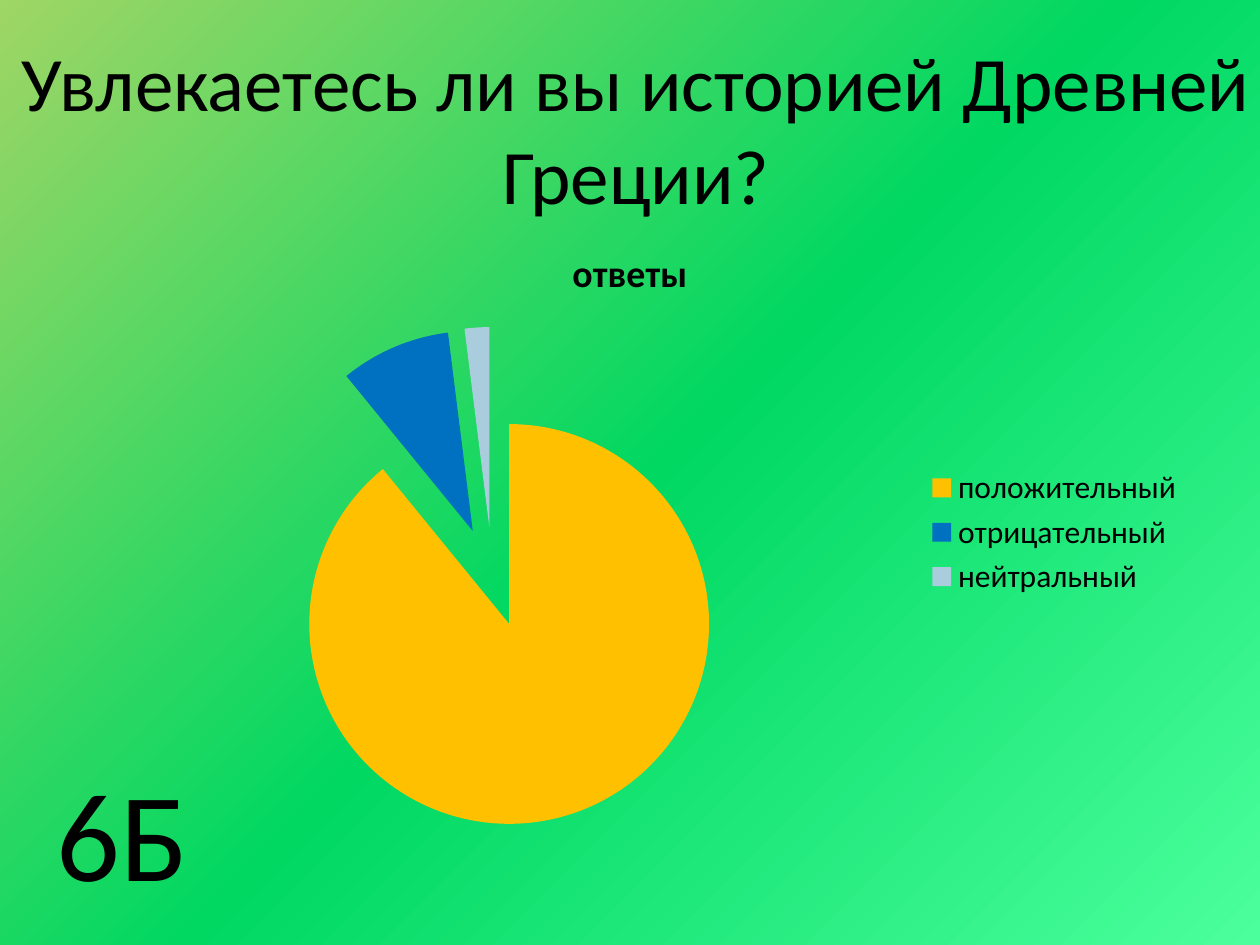
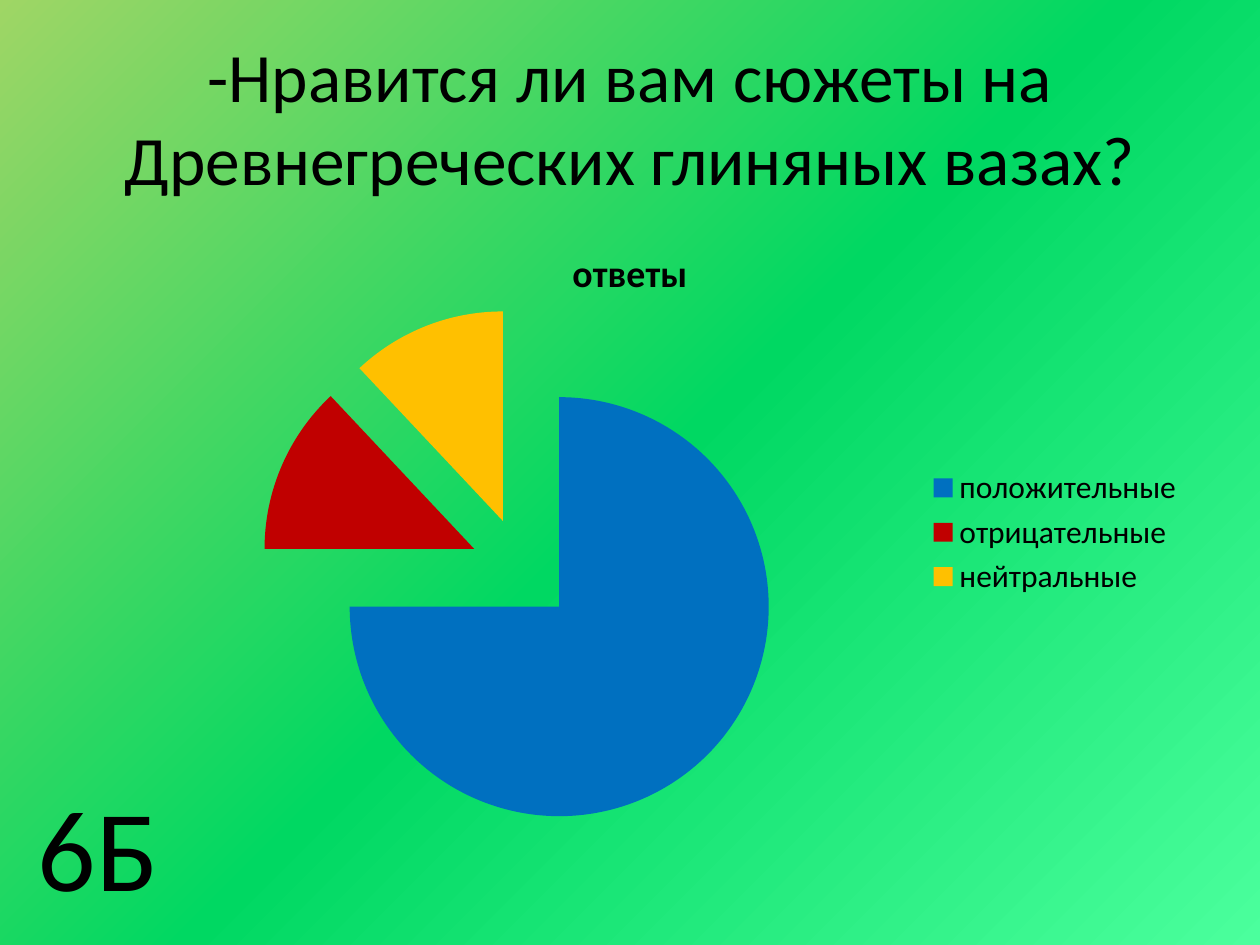
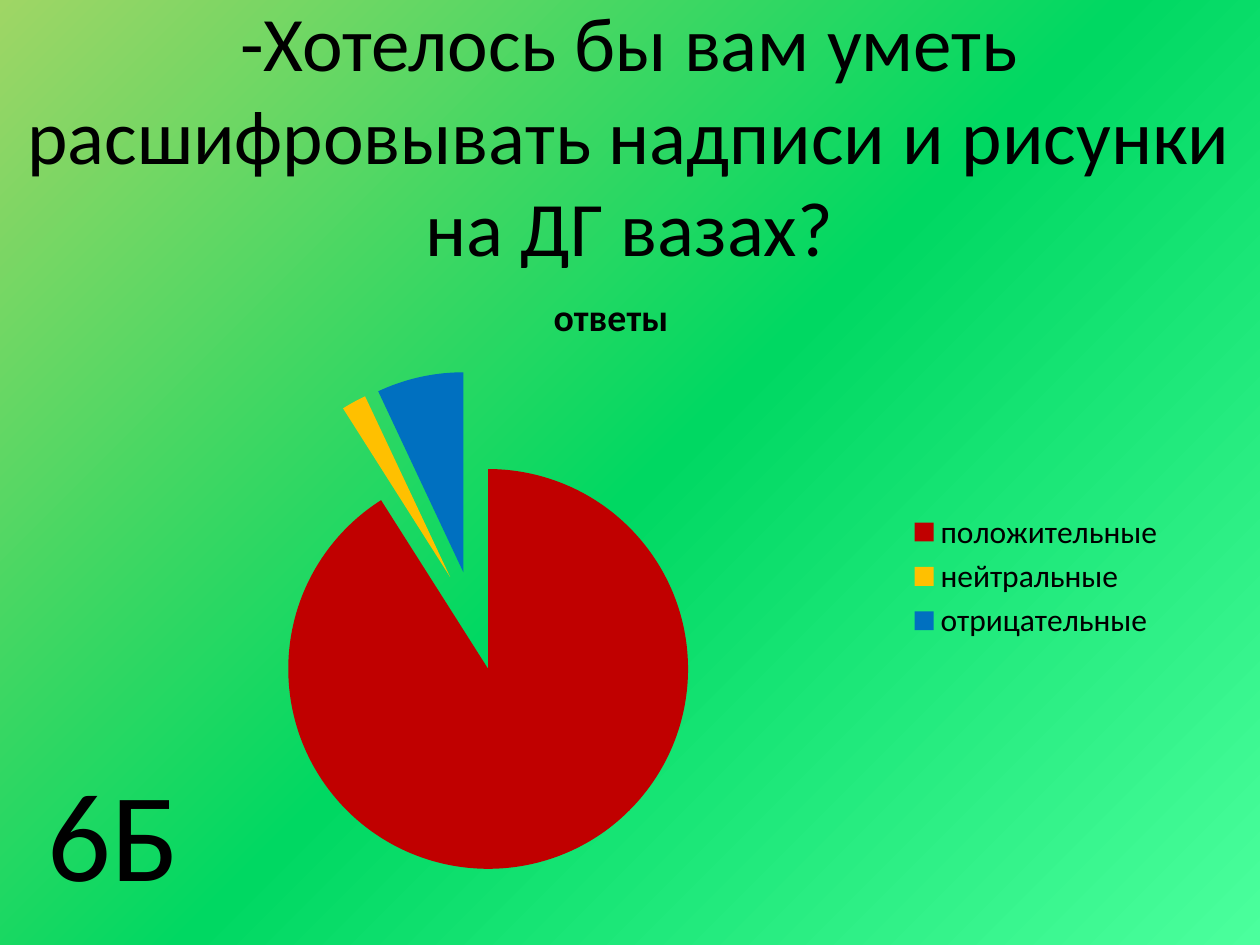
from dataclasses import dataclass

from lxml import etree
from pptx import Presentation
from pptx.chart.data import CategoryChartData
from pptx.dml.color import RGBColor
from pptx.enum.chart import XL_CHART_TYPE, XL_LEGEND_POSITION
from pptx.enum.text import MSO_ANCHOR, MSO_AUTO_SIZE, PP_ALIGN
from pptx.oxml.ns import qn
from pptx.util import Inches, Pt

PIE = XL_CHART_TYPE.PIE
LEGEND_RIGHT = XL_LEGEND_POSITION.RIGHT
MIDDLE = MSO_ANCHOR.MIDDLE
CENTER = PP_ALIGN.CENTER
LEFT = PP_ALIGN.LEFT
FIXED_SIZE = MSO_AUTO_SIZE.NONE
GROW = MSO_AUTO_SIZE.SHAPE_TO_FIT_TEXT


@dataclass(frozen=True)
class Theme:
    font: str = "Calibri"
    ink: str = "000000"
    gold: str = "FFC000"
    blue: str = "0070C0"
    red: str = "C00000"
    pale: str = "A9CDDC"
    gradient: tuple = ((0, "9FD665"), (51, "00D862"), (100, "4BFF9D"))
    chart_size: float = 18
    chart_title_size: float = 21.6


theme = Theme()
CHART_NAME = "ответы"
CLASS_NAME = "6Б"
EXPLOSION = 25

surveys = [
    {
        "question": "Увлекаетесь ли вы историей Древней Греции?",
        "question_at": (-0.02, 0, 10.14, 2.02),
        "question_size": 44,
        "chart_at": (0.5, 1.75, 9, 4.95),
        "answers": [
            ("положительный", 90, theme.gold),
            ("отрицательный", 9, theme.blue),
            ("нейтральный", 2, theme.pale),
        ],
        "plot_at": None,
        "class_at": (0.35, 5.95, 1.26, 1.31),
        "class_size": 72,
    },
    {
        "question": "-Нравится ли вам сюжеты на Древнегреческих глиняных вазах?",
        "question_at": (0.5, 0.3, 9, 1.25),
        "question_size": 39.6,
        "chart_at": (0.5, 1.75, 9, 4.95),
        "answers": [
            ("положительные", 75, theme.blue),
            ("отрицательные", 13, theme.red),
            ("нейтральные", 12, theme.gold),
        ],
        "plot_at": {"x": 0.04, "y": 0.14, "w": 0.73, "h": 0.84},
        "class_at": (0.2, 6.11, 1.41, 1.21),
        "class_size": 66,
    },
    {
        "question": "-Хотелось бы вам уметь расшифровывать надписи и рисунки на ДГ вазах?",
        "question_at": (-0.2, -0.19, 10.39, 2.5),
        "question_size": 44,
        "chart_at": (0.35, 2.1, 9, 4.95),
        "answers": [
            ("положительные", 91, theme.red),
            ("нейтральные", 2, theme.gold),
            ("отрицательные", 7, theme.blue),
        ],
        "plot_at": None,
        "class_at": (0.28, 5.95, 1.81, 1.31),
        "class_size": 72,
    },
]


def style_font(font, size, bold=False):
    font.name = theme.font
    font.size = Pt(size)
    font.bold = bold
    font.color.rgb = RGBColor.from_string(theme.ink)


def write_text(frame, text, size, align):
    frame.word_wrap = True
    para = frame.paragraphs[0]
    para.alignment = align
    span = para.add_run()
    span.text = text
    style_font(span.font, size)


deck = Presentation()
deck.slide_width = Inches(10)
deck.slide_height = Inches(7.5)

master = deck.slide_master
backdrop = master.background.fill
backdrop.gradient()
backdrop.gradient_angle = 315
stops = master.element.xpath(".//p:bg//a:gsLst")[0]
for stop in list(stops):
    stops.remove(stop)
for percent, color in theme.gradient:
    stop = etree.SubElement(stops, qn("a:gs"), pos=str(percent * 1000))
    etree.SubElement(stop, qn("a:srgbClr"), val=color)

title_only = deck.slide_layouts.get_by_name("Title Only")

for survey in surveys:
    page = deck.slides.add_slide(title_only)

    title = page.shapes.title
    title.left, title.top, title.width, title.height = map(Inches, survey["question_at"])
    title.text_frame.auto_size = FIXED_SIZE
    title.text_frame.vertical_anchor = MIDDLE
    write_text(title.text_frame, survey["question"], survey["question_size"], CENTER)

    names, values, colors = zip(*survey["answers"])
    chart_data = CategoryChartData()
    chart_data.categories = names
    chart_data.add_series(CHART_NAME, values)
    chart = page.shapes.add_chart(PIE, *map(Inches, survey["chart_at"]), chart_data).chart
    style_font(chart.font, theme.chart_size)

    chart.has_title = True
    heading = chart.chart_title.text_frame.paragraphs[0].add_run()
    heading.text = CHART_NAME
    style_font(heading.font, theme.chart_title_size, bold=True)
    chart.chart_title.include_in_layout = False

    chart.has_legend = True
    chart.legend.position = LEGEND_RIGHT
    chart.legend.include_in_layout = False

    pie = chart.plots[0]
    pie.vary_by_categories = True
    series_name = chart.element.xpath(".//c:ser/c:tx")[0]
    series_name.addnext(etree.Element(qn("c:explosion"), val=str(EXPLOSION)))
    for index, color in enumerate(colors):
        piece = pie.series[0].points[index].format
        piece.fill.solid()
        piece.fill.fore_color.rgb = RGBColor.from_string(color)
        piece.line.fill.background()

    if survey["plot_at"]:
        plot_area = chart.element.xpath(".//c:plotArea")[0]
        for old_layout in plot_area.findall(qn("c:layout")):
            plot_area.remove(old_layout)
        layout = etree.Element(qn("c:layout"))
        manual = etree.SubElement(layout, qn("c:manualLayout"))
        etree.SubElement(manual, qn("c:layoutTarget"), val="inner")
        for axis in "xy":
            etree.SubElement(manual, qn(f"c:{axis}Mode"), val="edge")
        for side, share in survey["plot_at"].items():
            etree.SubElement(manual, qn(f"c:{side}"), val=str(share))
        plot_area.insert(0, layout)

    class_box = page.shapes.add_textbox(*map(Inches, survey["class_at"]))
    class_box.text_frame.auto_size = GROW
    write_text(class_box.text_frame, CLASS_NAME, survey["class_size"], LEFT)

deck.save("out.pptx")
